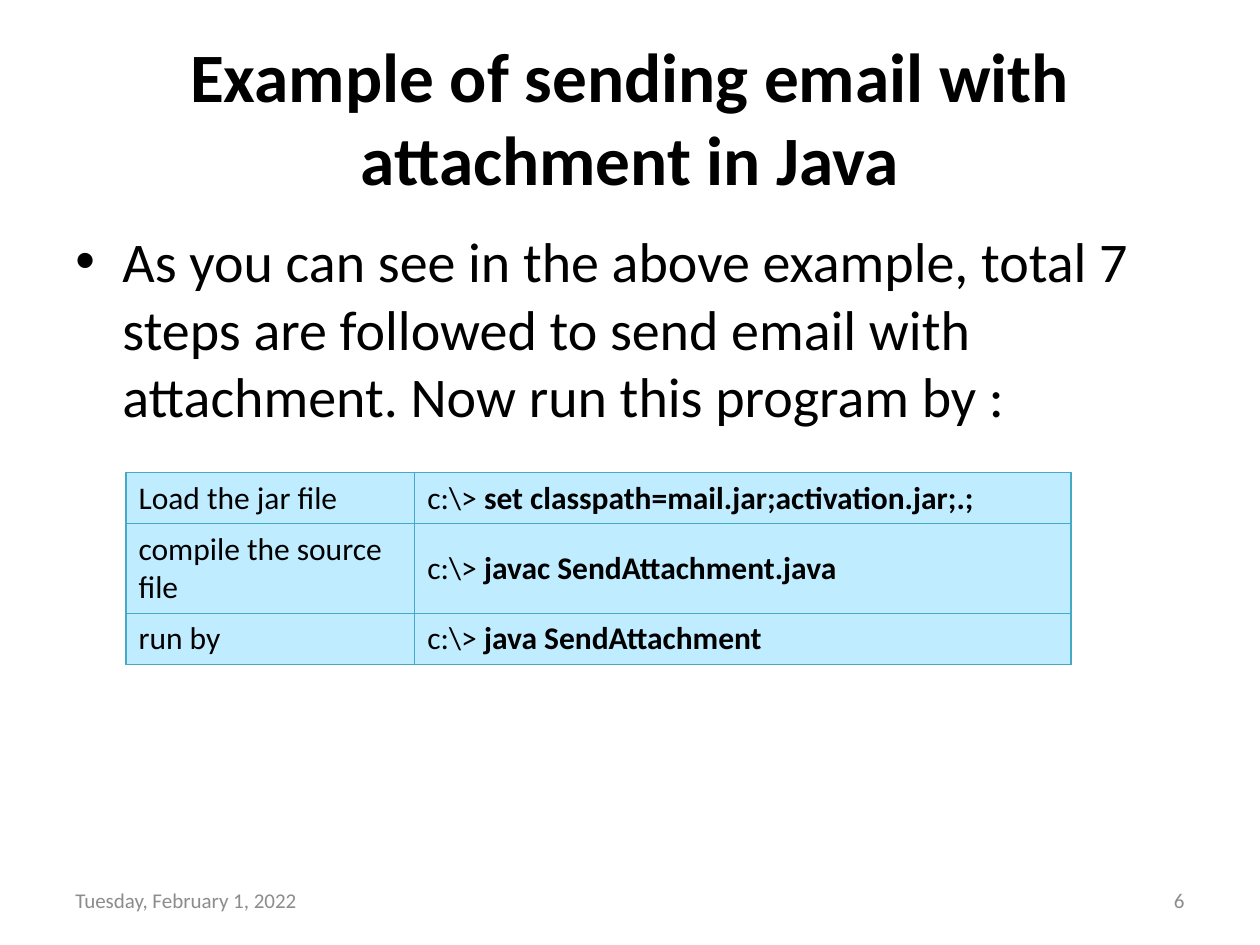
from lxml.etree import SubElement
from pptx import Presentation
from pptx.dml.color import RGBColor
from pptx.enum.text import MSO_ANCHOR, PP_ALIGN
from pptx.oxml.ns import qn
from pptx.util import Cm, Pt


def color(value):
    """Turn a hex string into a colour."""
    return RGBColor.from_string(value)


class Deck:
    """Hold the style and the current slide."""

    font = "Calibri"
    ink, gray, cell_fill, border = "000000", "8C8C8C", "BFECFF", "46AAC5"

    def __init__(self, width, height):
        """Start a presentation with one blank slide."""
        self.prs = Presentation()
        self.prs.slide_width, self.prs.slide_height = Cm(width), Cm(height)
        self.s = self.prs.slides.add_slide(self.prs.slide_layouts[6])

    def run(self, p, text, size, ink=ink, bold=False):
        """Add a styled run to a paragraph."""
        r = p.add_run()
        r.text = text
        r.font.name, r.font.size, r.font.bold = self.font, Pt(size), bold
        r.font.color.rgb = color(ink)

    def text(self, box, text, size, ink=ink, bold=False,
             align=PP_ALIGN.LEFT, anchor=MSO_ANCHOR.MIDDLE):
        """Add a wrapped text box and return its paragraph."""
        tf = self.s.shapes.add_textbox(*map(Cm, box)).text_frame
        tf.word_wrap, tf.vertical_anchor = True, anchor
        p = tf.paragraphs[0]
        p.alignment = align
        self.run(p, text, size, ink, bold)
        return p

    def bullet(self, box, text, size):
        """Add a text box with a hanging bullet."""
        p = self.text(box, text, size, anchor=MSO_ANCHOR.TOP)
        p.space_before = Pt(size * 0.2)
        pPr = p._p.get_or_add_pPr()
        pPr.set("marL", str(Cm(0.95)))
        pPr.set("indent", str(-Cm(0.95)))
        SubElement(pPr, qn("a:buFont"), typeface="Arial")
        SubElement(pPr, qn("a:buChar"), char="•")

    def outline(self, cell):
        """Draw the four borders of a cell ahead of its fill."""
        tcPr = cell._tc.get_or_add_tcPr()
        for side in ("a:lnL", "a:lnR", "a:lnT", "a:lnB"):
            ln = SubElement(tcPr, qn(side), w=str(Pt(0.75)))
            fill = SubElement(ln, qn("a:solidFill"))
            SubElement(fill, qn("a:srgbClr"), val=self.border)

    def table(self, left, top, widths, heights, rows, size):
        """Add a table whose cells are lists of (text, bold) runs."""
        table = self.s.shapes.add_table(
            len(rows), len(widths), Cm(left), Cm(top),
            Cm(sum(widths)), Cm(sum(heights))).table
        table.first_row = table.horz_banding = False
        for column, width in zip(table.columns, widths):
            column.width = Cm(width)
        for row, height, cells in zip(table.rows, heights, rows):
            row.height = Cm(height)
            for cell, runs in zip(row.cells, cells):
                self.outline(cell)
                cell.fill.solid()
                cell.fill.fore_color.rgb = color(self.cell_fill)
                cell.vertical_anchor = MSO_ANCHOR.MIDDLE
                for text, bold in runs:
                    self.run(cell.text_frame.paragraphs[0], text, size, bold=bold)


def main():
    """Build the slide and save it."""
    deck = Deck(25.4, 19.05)
    deck.text((1.27, 0.76, 22.86, 3.18),
              "Example of sending email with attachment in Java",
              39.6, bold=True, align=PP_ALIGN.CENTER)
    deck.bullet((1.27, 4.45, 22.86, 12.57),
                "As you can see in the above example, total 7 steps are followed "
                "to send email with attachment. Now run this program by :", 32)
    deck.text((1.27, 17.65, 5.93, 1.01), "Tuesday, February 1, 2022", 12, deck.gray)
    deck.text((18.2, 17.65, 5.93, 1.01), "6", 12, deck.gray, align=PP_ALIGN.RIGHT)
    commands = [
        ("Load the jar file", "set classpath=mail.jar;activation.jar;.;"),
        ("compile the source file", "javac SendAttachment.java"),
        ("run by", "java SendAttachment"),
    ]
    rows = [([(step, False)], [("c:\\> ", False), (command, True)])
            for step, command in commands]
    deck.table(2.54, 9.53, (5.82, 13.23), (1.03, 1.81, 1.03), rows, 18)
    deck.prs.save("out.pptx")


if __name__ == "__main__":
    main()
